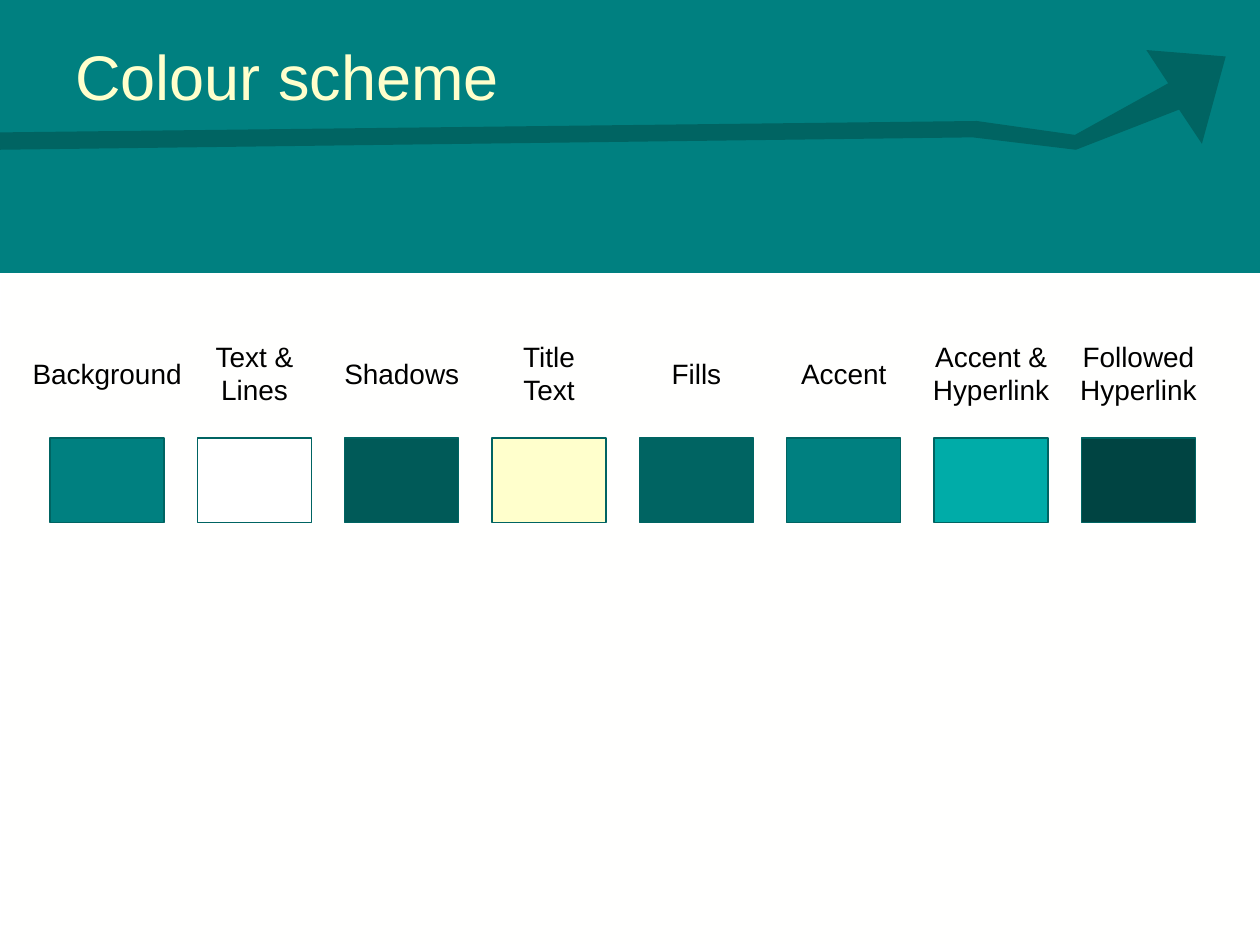
from dataclasses import dataclass

from pptx import Presentation
from pptx.dml.color import RGBColor
from pptx.enum.shapes import MSO_SHAPE
from pptx.enum.text import MSO_ANCHOR, MSO_AUTO_SIZE, PP_ALIGN
from pptx.util import Cm, Pt

RECT = MSO_SHAPE.RECTANGLE
MIDDLE = MSO_ANCHOR.MIDDLE
LEFT, CENTER = PP_ALIGN.LEFT, PP_ALIGN.CENTER
FIT_SHAPE, NO_FIT = MSO_AUTO_SIZE.SHAPE_TO_FIT_TEXT, MSO_AUTO_SIZE.NONE

COLORS = {
    "background": "008080",
    "text": "FFFFFF",
    "shadow": "005A58",
    "title": "FFFFCC",
    "fill": "006462",
    "accent": "008080",
    "hyperlink": "00ACA8",
    "followed": "004442",
    "panel": "FFFFFE",
    "label": "000000",
}

# Layout in centimetres
SLIDE_W, SLIDE_H = 25.4, 19.05
PANEL_TOP = 5.52
SWATCH_LEFT, SWATCH_TOP, SWATCH_W, SWATCH_H = 1.01, 8.83, 2.3, 1.7
PITCH = 2.97
LABEL_MIDDLE = 7.53
LABEL_H = {1: 0.94, 2: 1.63}

ARROW = [
    (0, 3.02), (19.61, 2.77), (21.69, 3.02), (23.77, 2.21), (24.23, 2.9),
    (24.71, 1.14), (23.11, 1.01), (23.55, 1.68), (21.67, 2.72),
    (19.69, 2.44), (0, 2.67),
]


@dataclass
class Swatch:
    label: str
    color: str
    label_w: float


SWATCHES = [
    Swatch("Background", "background", 3.55),
    Swatch("Text &\nLines", "text", 2.15),
    Swatch("Shadows", "shadow", 2.85),
    Swatch("Title\vText", "title", 1.6),
    Swatch("Fills", "fill", 1.52),
    Swatch("Accent", "accent", 2.25),
    Swatch("Accent &\nHyperlink", "hyperlink", 2.9),
    Swatch("Followed\nHyperlink", "followed", 2.9),
]


def rgb(name: str) -> RGBColor:
    return RGBColor.from_string(COLORS[name])


def paint(sp, fill: str, line: str | None = None) -> None:
    sp.shadow.inherit = False
    sp.fill.solid()
    sp.fill.fore_color.rgb = rgb(fill)
    if line:
        sp.line.color.rgb = rgb(line)
        sp.line.width = Pt(0.75)
    else:
        sp.line.fill.background()


def add_rect(s, x: float, y: float, w: float, h: float, fill: str, line: str) -> None:
    paint(s.shapes.add_shape(RECT, Cm(x), Cm(y), Cm(w), Cm(h)), fill, line)


def add_arrow(s, points: list[tuple[float, float]], fill: str) -> None:
    start, *rest = [(Cm(x), Cm(y)) for x, y in points]
    builder = s.shapes.build_freeform(*start)
    builder.add_line_segments(rest, close=True)
    paint(builder.convert_to_shape(), fill)


def add_text(s, x: float, y: float, w: float, h: float, text: str, size: int,
             color: str, align: PP_ALIGN, frame: dict) -> None:
    tf = s.shapes.add_textbox(Cm(x), Cm(y), Cm(w), Cm(h)).text_frame
    tf.text = text
    for name, value in frame.items():
        setattr(tf, name, value)
    font = {"name": "Arial", "size": Pt(size)}
    for p in tf.paragraphs:
        p.alignment = align
        for r in p.runs:
            for name, value in font.items():
                setattr(r.font, name, value)
            r.font.color.rgb = rgb(color)


def add_swatch(s, index: int, swatch: Swatch) -> None:
    x = SWATCH_LEFT + index * PITCH
    add_rect(s, x, SWATCH_TOP, SWATCH_W, SWATCH_H, swatch.color, "fill")
    h = LABEL_H[len(swatch.label.splitlines())]
    add_text(s, x + (SWATCH_W - swatch.label_w) / 2, LABEL_MIDDLE - h / 2,
             swatch.label_w, h, swatch.label, 16, "label", CENTER,
             {"word_wrap": False, "auto_size": FIT_SHAPE})


def main() -> None:
    prs = Presentation()
    prs.slide_width, prs.slide_height = Cm(SLIDE_W), Cm(SLIDE_H)
    s = prs.slides.add_slide(prs.slide_layouts[6])
    s.background.fill.solid()
    s.background.fill.fore_color.rgb = rgb("background")

    # Header: arrow behind the title
    add_arrow(s, ARROW, "fill")
    add_text(s, 1.27, 0.71, 23.04, 1.6, "Colour scheme", 36, "title", LEFT,
             {"word_wrap": True, "auto_size": NO_FIT, "vertical_anchor": MIDDLE})

    # White panel with the row of labelled swatches
    add_rect(s, 0, PANEL_TOP, SLIDE_W, SLIDE_H - PANEL_TOP, "panel", "text")
    for index, swatch in enumerate(SWATCHES):
        add_swatch(s, index, swatch)

    prs.save("out.pptx")


if __name__ == "__main__":
    main()
